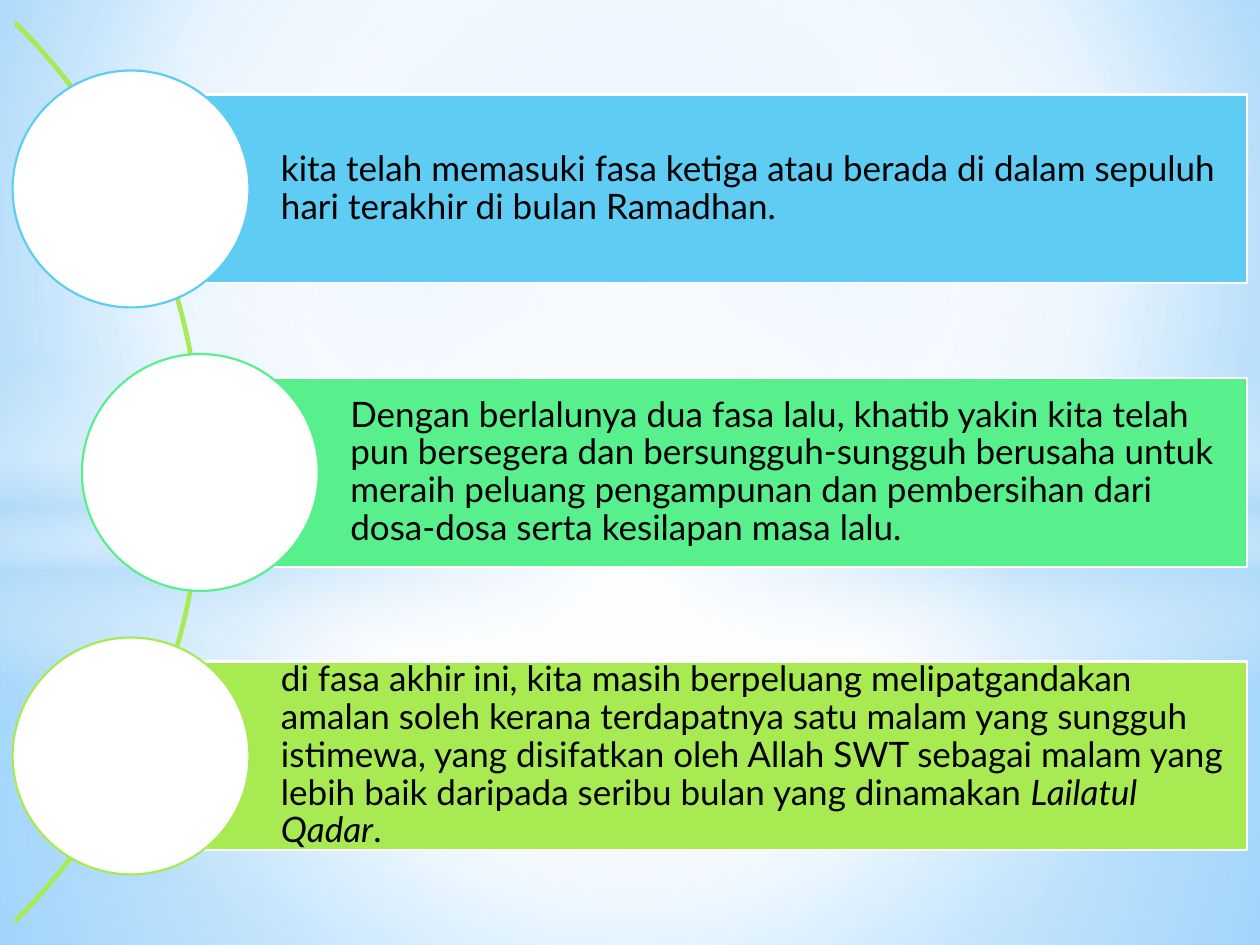
from lxml import etree
from pptx import Presentation
from pptx.dml.color import RGBColor
from pptx.enum.shapes import MSO_SHAPE as SHAPE
from pptx.enum.text import MSO_ANCHOR as ANCHOR, PP_ALIGN as ALIGN
from pptx.oxml.ns import qn
from pptx.util import Inches, Pt

COLORS = {
    "white": "FFFFFF", "black": "000000", "pale": "B4DCFA",
    "sky": "9ED5FF", "deep": "5BB9FF",
    "blue": "5ECCF3", "green": "58EF8D", "lime": "A7EA52",
}


def add_part(kind, box, fill=None, line=None):
    """Add a preset shape; box is left, top, width, height in inches."""
    part = slide.shapes.add_shape(kind, *[Inches(v) for v in box])
    part.shadow.inherit = False
    if fill:
        part.fill.solid()
        part.fill.fore_color.rgb = RGBColor.from_string(COLORS[fill])
    else:
        part.fill.background()
    if line:
        part.line.color.rgb = RGBColor.from_string(COLORS[line])
        part.line.width = Pt(1.25)
    else:
        part.line.fill.background()
    return part


def set_gradient(holder, stops, center=None):
    """Swap a solid fill for a gradient: radial around center, else vertical."""
    grad = etree.Element(qn("a:gradFill"), rotWithShape="1")
    stop_list = etree.SubElement(grad, qn("a:gsLst"))
    for position, color, opacity in stops:
        stop = etree.SubElement(stop_list, qn("a:gs"), pos=str(position * 1000))
        tint = etree.SubElement(stop, qn("a:srgbClr"), val=COLORS[color])
        if opacity < 100:
            etree.SubElement(tint, qn("a:alpha"), val=str(opacity * 1000))
    if center:
        radial = etree.SubElement(grad, qn("a:path"), path="circle")
        sides = {side: str(v * 1000) for side, v in zip("ltrb", center)}
        etree.SubElement(radial, qn("a:fillToRect"), **sides)
    else:
        etree.SubElement(grad, qn("a:lin"), ang="5400000", scaled="0")
    holder.replace(holder.find(qn("a:solidFill")), grad)


deck = Presentation()
deck.slide_width, deck.slide_height = Inches(10), Inches(7.5)
slide = deck.slides.add_slide(deck.slide_layouts[6])

# Background
slide.background.fill.solid()
set_gradient(slide._element.find(".//" + qn("p:bgPr")),
             [(0, "sky", 100), (60, "white", 100), (100, "deep", 100)],
             (20, 10, 20, 60))

# Soft light layers
MIDDLE = (50, 50, 50, 50)
light_layers = [
    (SHAPE.RECTANGLE, (0, 4.23, 10, 3.27), MIDDLE,
     [(0, "white", 91), (37, "white", 76), (100, "pale", 79)]),
    (SHAPE.RECTANGLE, (0, 0, 10, 4.23), MIDDLE,
     [(0, "white", 89), (48, "white", 62), (100, "pale", 79)]),
    (SHAPE.RECTANGLE, (0, 2.9, 10, 2.5), None,
     [(0, "white", 0), (29, "white", 30), (45, "pale", 40),
      (55, "white", 26), (65, "pale", 60), (100, "white", 0)]),
    (SHAPE.OVAL, (0, 1.75, 10, 5.58), MIDDLE,
     [(0, "white", 100), (54, "white", 0)]),
]
for kind, box, center, stops in light_layers:
    layer = add_part(kind, box, "white")
    set_gradient(layer._element.spPr, stops, center)

# Arc behind the circles
arc = add_part(SHAPE.BLOCK_ARC, (-8.48, -1.3, 10.09, 10.09), line="lime")
for index, value in enumerate((189, 27, 0.002)):
    arc.adjustments[index] = value

# Three points: bar left edge, color, text runs with their italics
points = [
    (1.04, "blue", [
        ("kita telah memasuki fasa ketiga atau berada di dalam sepuluh hari "
         "terakhir di bulan Ramadhan.", False)]),
    (1.59, "green", [
        ("Dengan berlalunya dua fasa lalu, khatib yakin kita telah pun "
         "bersegera dan bersungguh-sungguh berusaha untuk meraih peluang "
         "pengampunan dan pembersihan dari dosa-dosa serta kesilapan masa "
         "lalu.", False)]),
    (1.04, "lime", [
        ("di fasa akhir ini, kita masih berpeluang melipatgandakan amalan "
         "soleh kerana terdapatnya satu malam yang sungguh istimewa, yang "
         "disifatkan oleh Allah SWT sebagai malam yang lebih baik daripada "
         "seribu bulan yang dinamakan ", False),
        ("Lailatul Qadar", True),
        (".", False)]),
]
BAR_RIGHT, BAR_HEIGHT, FIRST_TOP, STEP = 9.9, 1.5, 0.75, 2.25
CIRCLE = 1.88
bar_format = {
    "word_wrap": True, "vertical_anchor": ANCHOR.MIDDLE,
    "margin_left": Inches(1.19), "margin_right": Inches(0.06),
    "margin_top": Inches(0.06), "margin_bottom": Inches(0.06),
}
for row, (left, color, runs) in enumerate(points):
    top = FIRST_TOP + row * STEP
    bar = add_part(SHAPE.RECTANGLE, (left, top, BAR_RIGHT - left, BAR_HEIGHT),
                   color, "white")
    for name, value in bar_format.items():
        setattr(bar.text_frame, name, value)
    message = bar.text_frame.paragraphs[0]
    message.alignment = ALIGN.LEFT
    message.line_spacing = 0.9
    for words, italic in runs:
        run = message.add_run()
        run.text = words
        for name, value in {"name": "Lato", "size": Pt(20), "italic": italic}.items():
            setattr(run.font, name, value)
        run.font.color.rgb = RGBColor.from_string(COLORS["black"])

    # Circle centred on the bar's left end
    add_part(SHAPE.OVAL, (left - CIRCLE / 2, top + (BAR_HEIGHT - CIRCLE) / 2,
                          CIRCLE, CIRCLE), "white", color)

deck.save("out.pptx")
